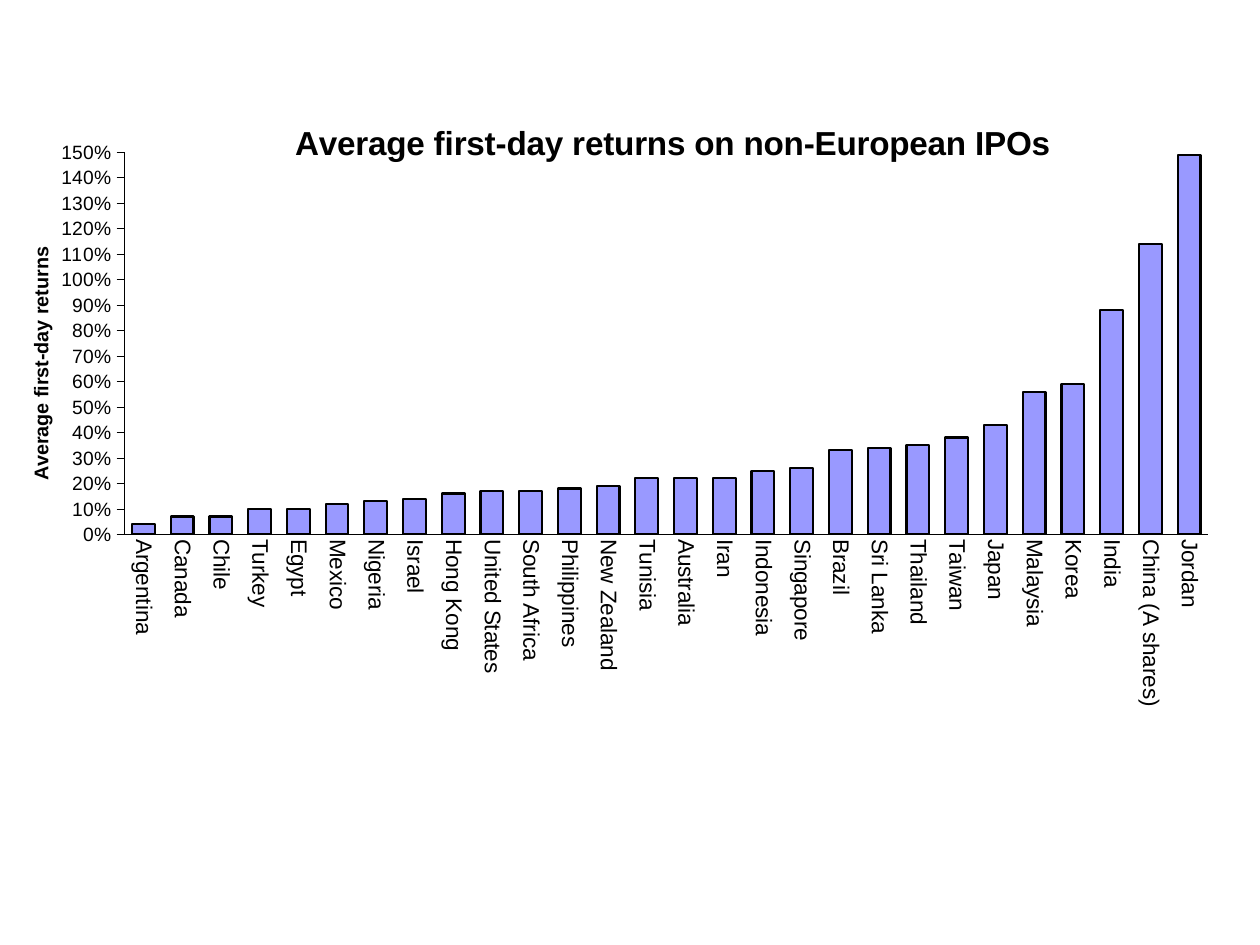
from lxml import etree
from pptx import Presentation, util as u
from pptx.chart.data import CategoryChartData
from pptx.dml.color import RGBColor
from pptx.enum import chart as ch
from pptx.oxml.ns import qn

PX = 914400 // 126
BLACK, LILAC = "000000", "9999FF"
RATES = {
    "Argentina": 0.04, "Canada": 0.07, "Chile": 0.07, "Turkey": 0.1,
    "Egypt": 0.1, "Mexico": 0.12, "Nigeria": 0.13, "Israel": 0.14,
    "Hong Kong": 0.16, "United States": 0.17, "South Africa": 0.17,
    "Philippines": 0.18, "New Zealand": 0.19, "Tunisia": 0.22,
    "Australia": 0.22, "Iran": 0.22, "Indonesia": 0.25, "Singapore": 0.26,
    "Brazil": 0.33, "Sri Lanka": 0.34, "Thailand": 0.35, "Taiwan": 0.38,
    "Japan": 0.43, "Malaysia": 0.56, "Korea": 0.59, "India": 0.88,
    "China (A shares)": 1.14, "Jordan": 1.49,
}


def rgb(code):
    return RGBColor.from_string(code)


def style(font, size, bold=False):
    font.name, font.size, font.bold = "Arial", u.Pt(size), bold
    font.color.rgb = rgb(BLACK)


def stroke(line, width):
    line.color.rgb = rgb(BLACK)
    line.width = u.Pt(width)


def place(part, **spots):
    """Fix a chart part at fractions of the chart area."""
    for old in part.findall(qn("c:layout")):
        part.remove(old)
    lay = etree.Element(qn("c:layout"))
    man = etree.SubElement(lay, qn("c:manualLayout"))
    if "w" in spots:
        etree.SubElement(man, qn("c:layoutTarget")).set("val", "inner")
    for key in "xy":
        etree.SubElement(man, qn(f"c:{key}Mode")).set("val", "edge")
    for key, val in spots.items():
        etree.SubElement(man, qn(f"c:{key}")).set("val", str(val))
    head = part.find(qn("c:tx"))
    part.insert(0 if head is None else 1, lay)


def turn(part, angle):
    body = next(part.iter(qn("a:bodyPr")))
    body.set("rot", str(angle * 60000))
    body.set("vert", "horz")


def label(title, words, size, x, y):
    title.text_frame.text = words
    style(title.text_frame.paragraphs[0].runs[0].font, size, True)
    place(title._element, x=x, y=y)
    title._element.find(qn("c:overlay")).set("val", "1")


def set_axes(chart):
    cat, val = chart.category_axis, chart.value_axis
    for axis, size in ((cat, 12.9), (val, 11)):
        axis.has_major_gridlines = False
        axis.minor_tick_mark = ch.XL_TICK_MARK.NONE
        style(axis.tick_labels.font, size)
        stroke(axis.format.line, 0.31)
    cat.major_tick_mark = ch.XL_TICK_MARK.NONE
    turn(cat._element.find(qn("c:txPr")), 90)
    val.major_tick_mark = ch.XL_TICK_MARK.OUTSIDE
    val.minimum_scale, val.maximum_scale, val.major_unit = 0, 1.5, 0.1
    val.tick_labels.number_format = "0%"
    val.tick_labels.number_format_is_linked = False
    label(val.axis_title, "Average first-day returns", 11.3, 0, 0.22)
    turn(val.axis_title._element, -90)


def add_returns(slide, left, top, width, height):
    data = CategoryChartData(number_format="0%")
    data.categories = list(RATES)
    data.add_series("Series 1", list(RATES.values()))
    box = [n * PX for n in (left, top, width, height)]
    chart = slide.shapes.add_chart(
        ch.XL_CHART_TYPE.COLUMN_CLUSTERED, *box, data).chart
    style(chart.font, 12.2)
    chart.has_legend = False
    label(chart.chart_title, "Average first-day returns on non-European IPOs",
          19, 0.22, 0.03)
    set_axes(chart)
    plot = chart.plots[0]
    plot.gap_width, plot.vary_by_categories = 70, False
    bars = plot.series[0].format
    bars.fill.solid()
    bars.fill.fore_color.rgb = rgb(LILAC)
    stroke(bars.line, 1.25)
    area = next(chart._chartSpace.iter(qn("c:plotArea")))
    place(area, x=0.083, y=0.085, w=0.9, h=0.567)


def main():
    deck = Presentation()
    deck.slide_width, deck.slide_height = u.Inches(10), u.Inches(7.5)
    slide = deck.slides.add_slide(deck.slide_layouts[6])
    add_returns(slide, 24, 95, 1205, 674)
    deck.save("out.pptx")


if __name__ == "__main__":
    main()
